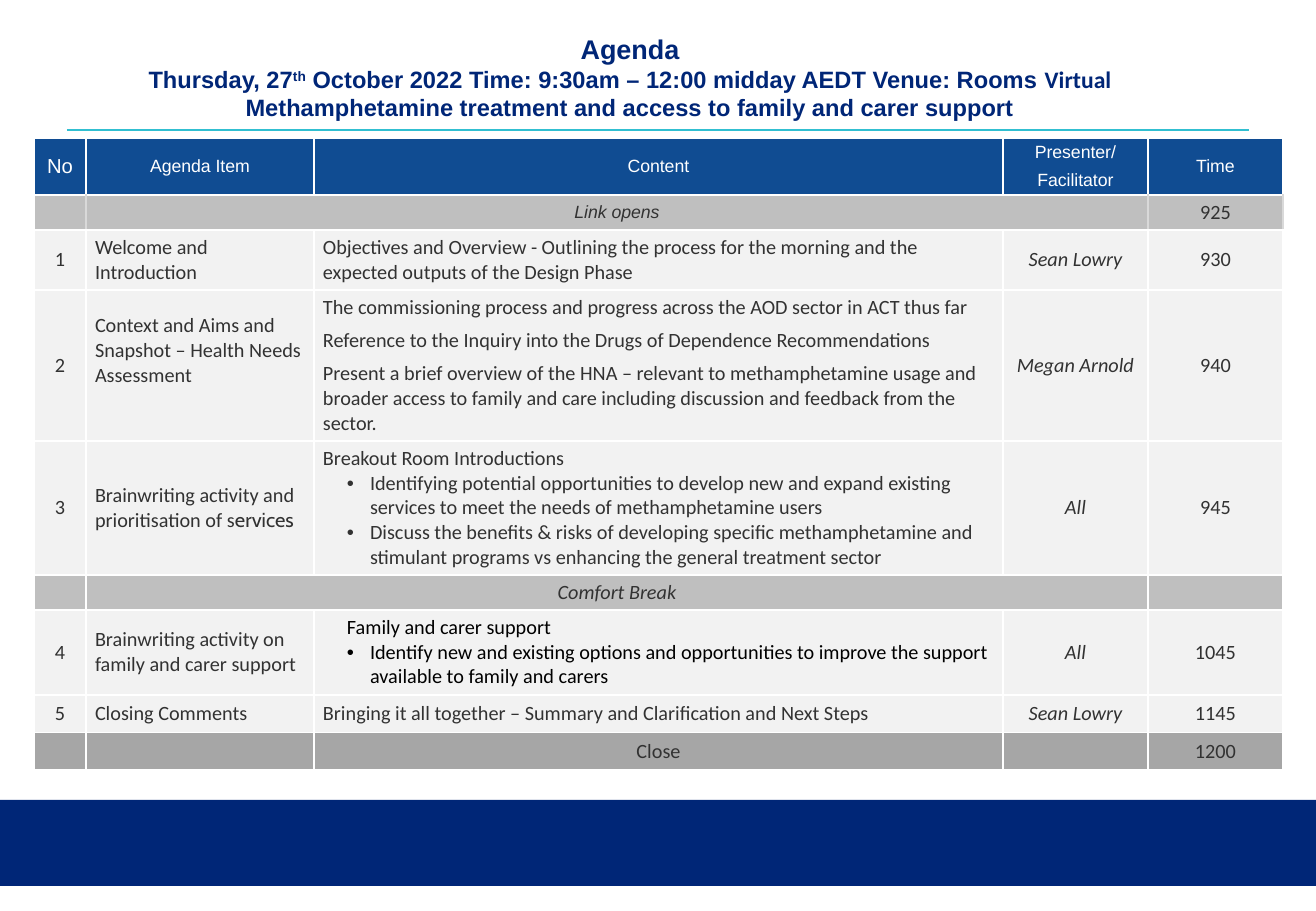
from lxml import etree
from pptx import Presentation, util as u
from pptx.dml.color import RGBColor
from pptx.enum import shapes, text
from pptx.oxml.ns import qn

PX = 914400 / 121.5
HUES = {"navy": "002677", "teal": "31BFD1", "head": "104C92", "band": "BFBFBF",
        "close": "A6A6A6", "pale": "F2F2F2", "rule": "D9D9D9",
        "ink": "323232", "black": "000000", "white": "FFFFFF"}
MID = text.PP_ALIGN.CENTER
LEFT = text.PP_ALIGN.LEFT


def px(*nums):
    return [u.Emu(round(n * PX)) for n in nums]


def write(par, words, size=12, face="Calibri", hue="ink", bold=False, slant=False, lift=0):
    run = par.add_run()
    run.text = words
    font = run.font
    font.size, font.name, font.bold, font.italic = u.Pt(size), face, bold, slant
    font.color.rgb = RGBColor.from_string(HUES[hue])
    if lift:
        run._r.get_or_add_rPr().set("baseline", str(lift * 1000))


deck = Presentation()
deck.slide_width, deck.slide_height = px(1316, 911)
slide = deck.slides.add_slide(deck.slide_layouts[5])

# Footer band
foot = slide.shapes.add_shape(shapes.MSO_SHAPE.RECTANGLE, *px(0, 800, 1316, 86))
foot.shadow.inherit = False
foot.fill.solid()
foot.fill.fore_color.rgb = RGBColor.from_string(HUES["navy"])
foot.line.fill.background()

# Rule under the title
rule = slide.shapes.add_connector(shapes.MSO_CONNECTOR.STRAIGHT, *px(67, 130, 1249, 130))
rule.line.color.rgb = RGBColor.from_string(HUES["teal"])
rule.line.width = u.Pt(1)
etree.SubElement(rule._element.spPr, qn("a:effectLst"))

# Title
title = slide.shapes.title
title.left, title.top, title.width, title.height = px(56, 26, 1148, 85)
frame = title.text_frame
frame.auto_size = text.MSO_AUTO_SIZE.NONE
frame.word_wrap = True
frame.vertical_anchor = text.MSO_ANCHOR.TOP
par = frame.paragraphs[0]
par.alignment = MID
look = {"face": "Arial", "hue": "navy", "bold": True, "size": 14}
write(par, "Agenda", **{**look, "size": 16})
par.add_line_break()
write(par, "Thursday, 27", **look)
write(par, "th", **look, lift=30)
write(par, " October 2022 Time: 9:30am – 12:00 midday AEDT Venue: Rooms ", **look)
write(par, "Virtual", **{**look, "face": "Calibri"})
par.add_line_break()
write(par, "Methamphetamine treatment and access to family and carer support", **look)

# Agenda rows: height, fill, cells (a bar marks a change of face)
rows = [
    (57, "head", ["No", "Agenda Item", "Content", "Presenter/\nFacilitator", "Time"]),
    (35, "band", ["", "Link opens", "", "", "925"]),
    (60, "pale", ["1", "Welcome and Introduction",
                  "Objectives and Overview - Outlining the process for the morning and the "
                  "expected outputs of the Design Phase", "Sean Lowry", "930"]),
    (151, "pale", ["2", "Context and Aims and Snapshot – Health Needs Assessment",
                   "The commissioning process and progress across the AOD sector in ACT thus far\n"
                   "Reference to the Inquiry into the Drugs of Dependence Recommendations\n"
                   "Present a brief overview of the HNA – relevant to methamphetamine usage and "
                   "broader access to family and care including discussion and feedback from the "
                   "sector.", "Megan Arnold", "940"]),
    (134, "pale", ["3", "Brainwriting activity and prioritisation of s|ervices",
                   "Breakout Room Introductions\n"
                   "•Identifying potential opportunities to develop new and expand existing "
                   "services to meet the needs of methamphetamine users\n"
                   "•Discuss the benefits & risks of developing specific methamphetamine and "
                   "stimulant programs vs enhancing the general treatment sector", "All", "945"]),
    (35, "band", ["", "Comfort Break", "", "", ""]),
    (85, "pale", ["4", "Brainwriting activity on family and carer support",
                  "Family and carer support\n"
                  "•Identify new and existing options and opportunities to improve the support "
                  "available to family and carers", "All", "1045"]),
    (38, "pale", ["5", "Closing Comments",
                  "Bringing it all together – Summary and Clarification and Next Steps",
                  "Sean Lowry", "1145"]),
    (37, "close", ["", "", "Close", "", "1200"]),
]
cols = [52, 228, 689, 145, 135]
LINK, AIMS, CARE = 1, 3, 6

# Agenda table
high = sum(row[0] for row in rows)
table = slide.shapes.add_table(len(rows), len(cols), *px(34, 138, sum(cols), high)).table
table.horz_banding = False
for col, wide in zip(table.columns, cols):
    col.width = px(wide)[0]

for r, (tall, fill, cells) in enumerate(rows):
    table.rows[r].height = px(tall)[0]
    for c, words in enumerate(cells):
        cell = table.cell(r, c)
        cell.vertical_anchor = text.MSO_ANCHOR.MIDDLE
        low = 34 if (r, c) == (AIMS, 1) else 4
        cell.margin_left, cell.margin_right, cell.margin_top, cell.margin_bottom = px(9, 9, 4, low)

        # Borders and fill
        tone = cell._tc.get_or_add_tcPr()
        for side in "LRTB":
            grey = r == LINK and side in "LR" and (c, side) != (0, "L")
            edge = etree.SubElement(tone, qn("a:ln" + side), w="12700")
            paint = etree.SubElement(edge, qn("a:solidFill"))
            etree.SubElement(paint, qn("a:srgbClr"), val=HUES["rule" if grey else "white"])
        cell.fill.solid()
        cell.fill.fore_color.rgb = RGBColor.from_string(HUES[fill])

        # Format by row and column
        wide = fill == "band" and c == 1
        look = {"slant": wide or (c == 3 and fill == "pale")}
        if fill == "head":
            look.update(face="Arial", hue="white", size=10.5 if c else 12)
        elif wide and r == LINK:
            look.update(face="Arial", size=10.5)
        elif (r, c) == (CARE, 2):
            look.update(hue="black")

        # Paragraphs
        for n, line in enumerate(words.split("\n")):
            par = cell.text_frame.add_paragraph() if n else cell.text_frame.paragraphs[0]
            par.alignment = LEFT if fill == "pale" and c in (1, 2) else MID
            if not line:
                etree.SubElement(par._p, qn("a:endParaRPr"), sz="1200")
                continue
            prop = par._p.get_or_add_pPr()
            if line[0] == "•":
                prop.set("marL", str(px(47)[0]))
                prop.set("indent", str(px(-23)[0]))
                etree.SubElement(prop, qn("a:buFont"), typeface="Arial")
                etree.SubElement(prop, qn("a:buChar"), char="•")
            elif (r, c) == (CARE, 2):
                prop.set("marL", str(px(24)[0]))
            if "•" not in words:
                par.space_before, par.space_after = u.Pt(2 if n else 0), u.Pt(3)
            main, _, tail = line.lstrip("•").partition("|")
            write(par, main, **look)
            if tail:
                write(par, tail, **{**look, "face": "Cabin"})
    if fill == "band":
        table.cell(r, 1).merge(table.cell(r, 3))

deck.save("out.pptx")
